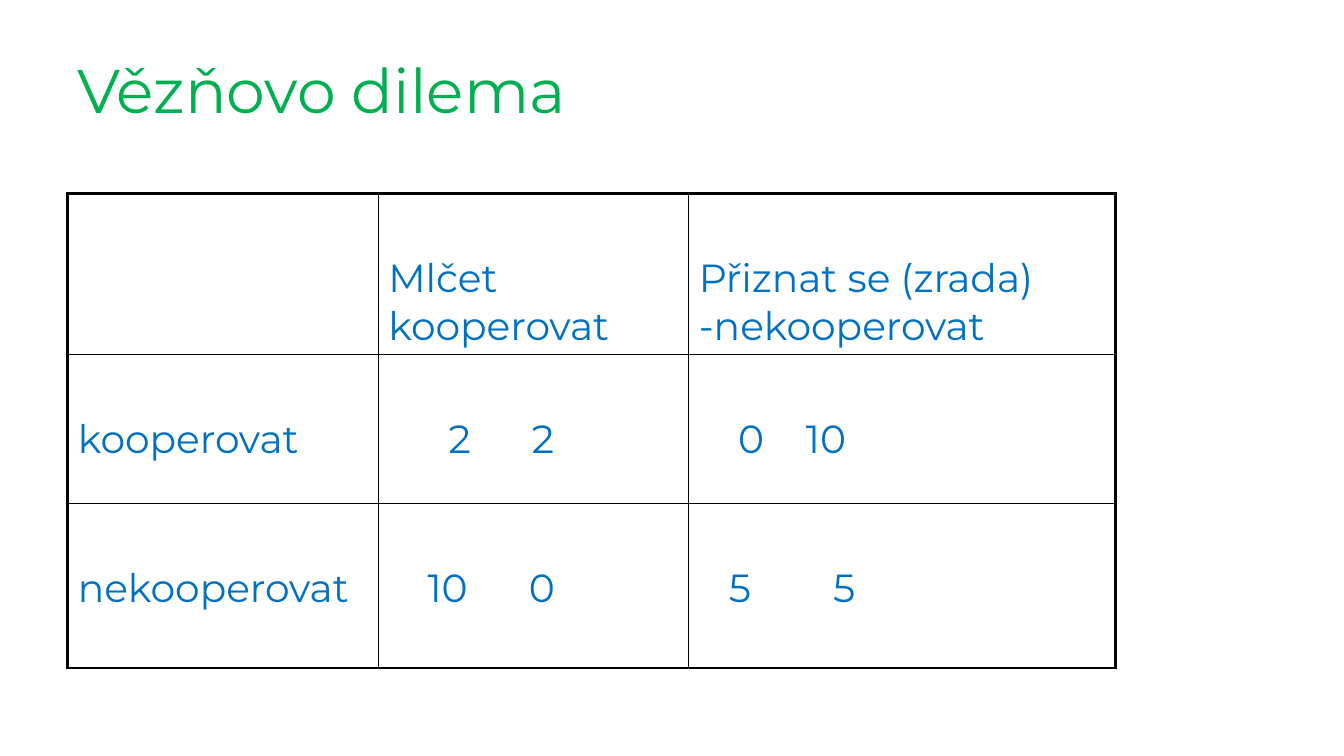
from dataclasses import dataclass

from lxml.etree import SubElement
from pptx import Presentation
from pptx.dml.color import RGBColor
from pptx.enum.text import MSO_ANCHOR, PP_ALIGN
from pptx.oxml import parse_xml
from pptx.oxml.ns import nsdecls, qn
from pptx.slide import Slide
from pptx.table import _Cell as Cell
from pptx.text.text import _Paragraph as Paragraph
from pptx.util import Pt

GREEN = RGBColor(0x00, 0xB0, 0x50)
BLUE = RGBColor(0x00, 0x70, 0xC0)
BLACK = RGBColor(0x00, 0x00, 0x00)
FONT = "Montserrat"
OUTER, INNER = 2.25, 1
COL_WIDTHS = (221.8, 221.8, 304.8)
ROW_HEIGHTS = (115, 106.6, 117.4)


@dataclass(frozen=True)
class Entry:
    text: str = ""
    tabs: tuple[float, ...] = ()


PAYOFFS = (
    (Entry(), Entry("Mlčet kooperovat"), Entry("Přiznat se (zrada) -nekooperovat")),
    (Entry("kooperovat"), Entry("\t2\t2", (43, 102.5)), Entry("\t0\t10", (28, 76.5))),
    (Entry("nekooperovat"), Entry("\t10\t0", (28, 100.5)), Entry("\t5\t5", (21.5, 96))),
)


def set_font(p: Paragraph, size: float, color: RGBColor) -> None:
    p.font.name = FONT
    p.font.size = Pt(size)
    p.font.color.rgb = color


def set_tabs(p: Paragraph, tabs: tuple[float, ...]) -> None:
    tab_list = SubElement(p._p.get_or_add_pPr(), qn("a:tabLst"))
    for pos in tabs:
        SubElement(tab_list, qn("a:tab"), pos=str(Pt(pos)), algn="l")


def set_borders(cell: Cell, widths: dict[str, float]) -> None:
    tc_pr = cell._tc.get_or_add_tcPr()
    for i, (side, width) in enumerate(widths.items()):
        tc_pr.insert(i, parse_xml(
            f'<a:ln{side} {nsdecls("a")} w="{Pt(width)}"><a:solidFill>'
            f'<a:srgbClr val="{BLACK}"/></a:solidFill></a:ln{side}>'))


def fill_cell(cell: Cell, entry: Entry) -> None:
    cell.fill.background()
    cell.margin_top, cell.margin_bottom = Pt(43.6), Pt(3)
    p = cell.text_frame.paragraphs[0]
    if entry.text:
        p.add_run().text = entry.text
    if entry.tabs:
        set_tabs(p, entry.tabs)
    set_font(p, 28, BLUE)


def add_title(s: Slide) -> None:
    sp = s.shapes.title
    sp.left, sp.top, sp.width, sp.height = Pt(48), Pt(21.6), Pt(864), Pt(90)
    tf = sp.text_frame
    tf.text = "Vězňovo dilema"
    tf.vertical_anchor = MSO_ANCHOR.MIDDLE
    p = tf.paragraphs[0]
    p.alignment = PP_ALIGN.LEFT
    p.line_spacing = 0.9
    set_font(p, 44, GREEN)


def add_payoffs(s: Slide) -> None:
    n_rows, n_cols = len(ROW_HEIGHTS), len(COL_WIDTHS)
    table = s.shapes.add_table(
        n_rows, n_cols, Pt(48.4), Pt(138.2),
        Pt(sum(COL_WIDTHS)), Pt(sum(ROW_HEIGHTS))).table
    table.first_row = table.horz_banding = False
    for col, width in zip(table.columns, COL_WIDTHS):
        col.width = Pt(width)
    for row, height in zip(table.rows, ROW_HEIGHTS):
        row.height = Pt(height)
    for r, entries in enumerate(PAYOFFS):
        for c, entry in enumerate(entries):
            cell = table.cell(r, c)
            fill_cell(cell, entry)
            set_borders(cell, {
                "L": OUTER if c == 0 else INNER,
                "R": OUTER if c == n_cols - 1 else INNER,
                "T": OUTER if r == 0 else INNER,
                "B": OUTER if r == n_rows - 1 else INNER,
            })


def main() -> None:
    prs = Presentation()
    prs.slide_width, prs.slide_height = Pt(960), Pt(540)
    s = prs.slides.add_slide(prs.slide_layouts[5])
    add_title(s)
    add_payoffs(s)
    prs.save("out.pptx")


if __name__ == "__main__":
    main()
